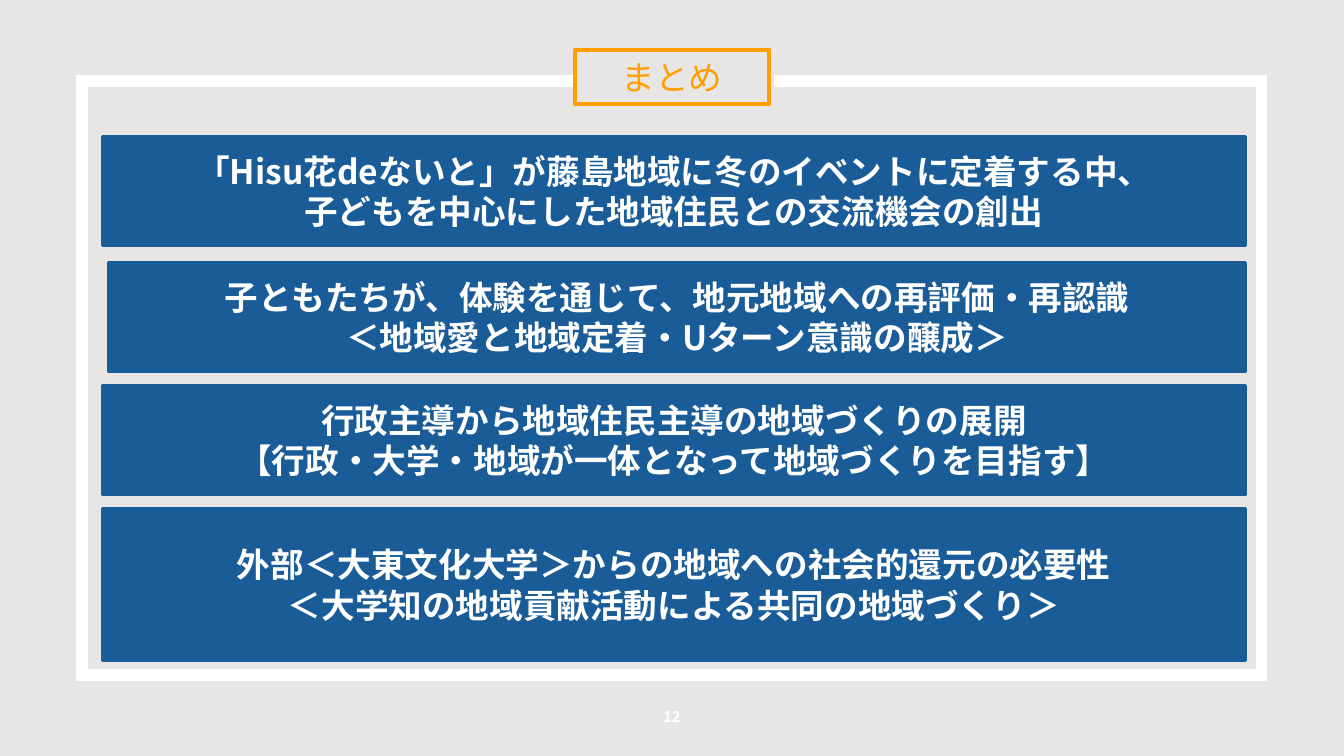
from lxml.etree import SubElement
from pptx import Presentation
from pptx.dml.color import RGBColor
from pptx.enum.shapes import MSO_SHAPE
from pptx.enum.text import MSO_ANCHOR, PP_ALIGN
from pptx.oxml.ns import qn
from pptx.util import Pt

FONT = "Noto Sans CJK JP"


def rgb(color):
    return RGBColor.from_string(color)


def write(sp, text, size, color, bold):
    tf = sp.text_frame
    tf.word_wrap = True
    tf.vertical_anchor = MSO_ANCHOR.MIDDLE
    tf.margin_top = tf.margin_bottom = 0
    tf.text = text
    for p in tf.paragraphs:
        p.alignment = PP_ALIGN.CENTER
        for r in p.runs:
            r.font.size = Pt(size)
            r.font.bold = bold
            r.font.name = FONT
            r.font.color.rgb = rgb(color)
            SubElement(r.font._element, qn("a:ea"), typeface=FONT)


prs = Presentation()
prs.slide_width = Pt(720)
prs.slide_height = Pt(405)
s = prs.slides.add_slide(prs.slide_layouts[6])
s.background.fill.solid()
s.background.fill.fore_color.rgb = rgb("E8E6E5")

left, top, right, bottom = 44, 43.4, 676, 361.6
corners = [(left, top), (left, bottom), (right, bottom), (right, top), (414.5, top)]
fb = s.shapes.build_freeform(Pt(308), Pt(top))
fb.add_line_segments([(Pt(x), Pt(y)) for x, y in corners], close=False)
frame = fb.convert_to_shape()
frame.shadow.inherit = False
frame.fill.background()
frame.line.color.rgb = rgb("FFFFFF")
frame.line.width = Pt(6)
SubElement(frame.line._get_or_add_ln(), qn("a:miter"), lim="800000")

title = s.shapes.add_shape(MSO_SHAPE.RECTANGLE, Pt(308), Pt(26.8), Pt(104.2), Pt(28.8))
title.shadow.inherit = False
title.fill.background()
title.line.color.rgb = rgb("FF9E00")
title.line.width = Pt(2.25)
write(title, "まとめ", 18, "FF9E00", False)

right = 667.2
messages = [
    (54.8, 73, 58.8, "「Hisu花deないと」が藤島地域に冬のイベントに定着する中、\n子どもを中心にした地域住民との交流機会の創出"),
    (58.2, 140.5, 58.8, "子ともたちが、体験を通じて、地元地域への再評価・再認識\n＜地域愛と地域定着・Uターン意識の醸成＞"),
    (54.8, 206.5, 58.8, "行政主導から地域住民主導の地域づくりの展開\n【行政・大学・地域が一体となって地域づくりを目指す】"),
    (54.8, 272.3, 81.6, "外部＜大東文化大学＞からの地域への社会的還元の必要性\n＜大学知の地域貢献活動による共同の地域づくり＞"),
]
for x, y, height, text in messages:
    sp = s.shapes.add_shape(MSO_SHAPE.RECTANGLE, Pt(x), Pt(y), Pt(right - x), Pt(height))
    sp.shadow.inherit = False
    sp.fill.solid()
    sp.fill.fore_color.rgb = rgb("195C97")
    sp.line.color.rgb = rgb("195C97")
    sp.line.width = Pt(1.5)
    write(sp, text, 18, "FFFFFF", True)

number = s.shapes.add_textbox(Pt(340), Pt(374), Pt(40), Pt(20))
write(number, "12", 8, "FFFFFF", True)

prs.save("out.pptx")
